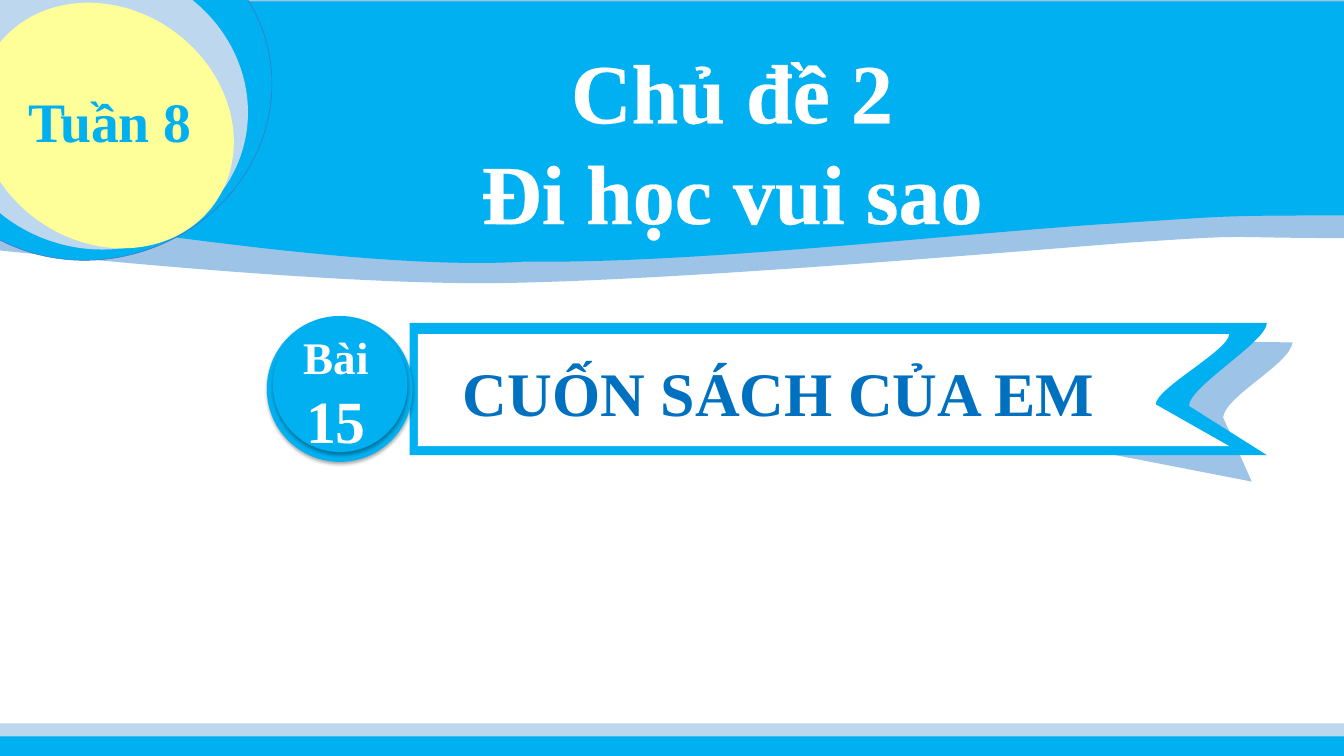
from pptx import Presentation
from pptx.dml.color import RGBColor
from pptx.enum.shapes import MSO_SHAPE
from pptx.enum.text import MSO_ANCHOR, MSO_AUTO_SIZE, PP_ALIGN
from pptx.oxml import parse_xml
from pptx.util import Inches, Pt

OVAL, RECT = MSO_SHAPE.OVAL, MSO_SHAPE.RECTANGLE
TOP, CENTER = MSO_ANCHOR.TOP, PP_ALIGN.CENTER
GROW = MSO_AUTO_SIZE.SHAPE_TO_FIT_TEXT

SKY = RGBColor(0x00, 0xB0, 0xF0)
MIST = RGBColor(0x9D, 0xC3, 0xE6)
PALE = RGBColor(0xBD, 0xD7, 0xEE)
LEMON = RGBColor(0xFF, 0xFF, 0x99)
NAVY = RGBColor(0x00, 0x70, 0xC0)
EDGE = RGBColor(0x44, 0x72, 0xC4)
WHITE = RGBColor(0xFF, 0xFF, 0xFF)

FONT = "Times New Roman"
NS = "http://schemas.openxmlformats.org/drawingml/2006/main"

SHADOW = (f'<a:effectLst xmlns:a="{NS}">'
          '<a:outerShdw blurRad="44450" dist="27940" dir="5400000" algn="ctr" rotWithShape="0">'
          '<a:srgbClr val="000000"><a:alpha val="32000"/></a:srgbClr>'
          '</a:outerShdw></a:effectLst>')
STROKE = (f'<a:ln xmlns:a="{NS}" w="3175"><a:solidFill>'
          '<a:srgbClr val="FFFFFF"/></a:solidFill></a:ln>')

# Outlines: two numbers are a corner, six are a curve
WAVE_BACK = [(0.03, -0.03), (17.95, -0.03), (17.93, 0.84, 17.94, 2.28, 17.91, 3.15),
             (15.99, 3.15, 16.74, 3.09, 14.93, 3.21), (12.68, 3.39, 9.06, 3.69, 6.85, 3.74),
             (4.68, 3.8, 0.82, 3.4, -0.03, 3.31), (-0.05, 2.58, 0.04, 0.71, 0.03, -0.03)]
WAVE_FRONT = [(-0.02, 0.02), (17.91, 0.02), (17.88, 0.81, 17.89, 2.05, 17.86, 2.85),
              (15.95, 2.85, 16.32, 2.86, 14.51, 2.97), (12.26, 3.13, 9.11, 3.49, 6.94, 3.46),
              (4.78, 3.6, 0.77, 2.89, -0.08, 2.82), (-0.1, 2.15, -0.01, 0.69, -0.02, 0.02)]
FOLD = [(12.94, 4.47), (17.1, 4.53), (17.06, 4.82, 16.22, 5.23, 16.18, 5.52),
        (16.56, 6.37), (12.8, 5.64), (12.94, 4.47)]
BAND = [(5.42, 4.27), (16.76, 4.27), (16.76, 4.52, 15.72, 5.12, 15.73, 5.37),
        (16.76, 6.02), (5.42, 6.02), (5.42, 4.27)]
PANEL = [(5.53, 4.42), (16.26, 4.42), (16.26, 4.63, 15.28, 5.14, 15.29, 5.35),
         (16.26, 5.9), (5.53, 5.9), (5.53, 4.42)]


def paint(shape, fill, line=None):
    shape.shadow.inherit = False
    shape.fill.solid()
    shape.fill.fore_color.rgb = fill
    if line is None:
        shape.line.fill.background()
    else:
        shape.line.color.rgb = line
        shape.line.width = Pt(0.5)


def add_form(parent, kind, box, fill, line=None, turn=0):
    shape = parent.shapes.add_shape(kind, *map(Inches, box))
    shape.rotation = turn
    paint(shape, fill, line)
    return shape


def add_disc(parent, box):
    """Circle with a soft shadow below it."""
    props = add_form(parent, OVAL, box, SKY)._element.spPr
    props.replace(props.find(f"{{{NS}}}effectLst"), parse_xml(SHADOW))


def add_curve(parent, outline, fill):
    """Join the end points by lines, then bend the curved ones."""
    first, *rest = [(Inches(part[-2]), Inches(part[-1])) for part in outline]
    form = parent.shapes.build_freeform(*first)
    form.add_line_segments(rest, close=True)
    shape = form.convert_to_shape()
    paint(shape, fill)
    left, top = min(x for x, y in [first] + rest), min(y for x, y in [first] + rest)
    sides = list(shape._element.iter(f"{{{NS}}}lnTo"))
    for side, part in zip(sides, outline[1:]):
        if len(part) == 6:
            knots = "".join(f'<a:pt x="{Inches(x) - left}" y="{Inches(y) - top}"/>'
                            for x, y in zip(part[::2], part[1::2]))
            bend = parse_xml(f'<a:cubicBezTo xmlns:a="{NS}">{knots}</a:cubicBezTo>')
            side.getparent().replace(side, bend)


def set_text(shape, box, lines, color):
    """Fill a shape with centred bold lines of (words, size)."""
    shape.left, shape.top, shape.width, shape.height = map(Inches, box)
    frame = shape.text_frame
    frame.word_wrap = True
    frame.auto_size = GROW
    frame.vertical_anchor = TOP
    frame.margin_left = frame.margin_right = Inches(0.18)
    frame.margin_top = frame.margin_bottom = Inches(0.09)
    frame.text = "\n".join(words for words, size in lines)
    for para, (words, size) in zip(frame.paragraphs, lines):
        para.alignment = CENTER
        font = para.font
        font.name, font.size, font.bold = FONT, Pt(size), True
        font.color.rgb = color


def add_label(slide, box, lines, color):
    set_text(slide.shapes.add_textbox(0, 0, 0, 0), box, lines, color)


def add_title(slide, box, lines):
    title = slide.shapes.title
    set_text(title, box, lines, WHITE)
    for props in title._element.iter(f"{{{NS}}}defRPr"):
        props.insert(0, parse_xml(STROKE))
    slide.shapes._spTree.append(title._element)  # bring to front


def main():
    deck = Presentation()
    deck.slide_width, deck.slide_height = Inches(17.78), Inches(10)
    slide = deck.slides.add_slide(deck.slide_layouts[5])

    # Header waves and upper footer strip
    add_curve(slide, WAVE_BACK, MIST)
    add_curve(slide, WAVE_FRONT, SKY)
    add_form(slide, RECT, (0, 9.57, 17.78, 0.26), PALE)

    # Lesson ribbon
    ribbon = slide.shapes.add_group_shape()
    for outline, fill in ((FOLD, MIST), (BAND, SKY), (PANEL, WHITE)):
        add_curve(ribbon, outline, fill)

    # Number disc
    disc = slide.shapes.add_group_shape()
    add_disc(disc, (3.53, 4.18, 1.93, 1.93))
    add_disc(disc, (3.61, 4.2, 1.78, 1.78))

    # Week badge
    badge = slide.shapes.add_group_shape()
    add_form(badge, OVAL, (-1.19, -1.04, 4.8, 4.47), SKY, EDGE, 163.6)
    add_form(badge, OVAL, (-0.73, -0.46, 4.02, 3.75), PALE, turn=16.1)
    add_form(badge, OVAL, (-0.38, 0.12, 3.55, 3.08), LEMON, turn=35.8)

    # Wording
    add_label(slide, (-0.28, 1.06, 3.47, 1.08), [("Tuần 8", 53)], SKY)
    add_title(slide, (2.72, 0.43, 13.93, 2.87), [("Chủ đề 2", 80), ("Đi học vui sao", 80)])
    add_label(slide, (3.48, 4.27, 1.93, 1.85), [("Bài", 43), ("15", 57)], WHITE)
    add_label(slide, (5.39, 4.6, 9.83, 1.17), [("CUỐN SÁCH CỦA EM", 59)], NAVY)

    # Lower footer strip
    add_form(slide, RECT, (0, 9.74, 17.78, 0.26), SKY)

    deck.save("out.pptx")


if __name__ == "__main__":
    main()
